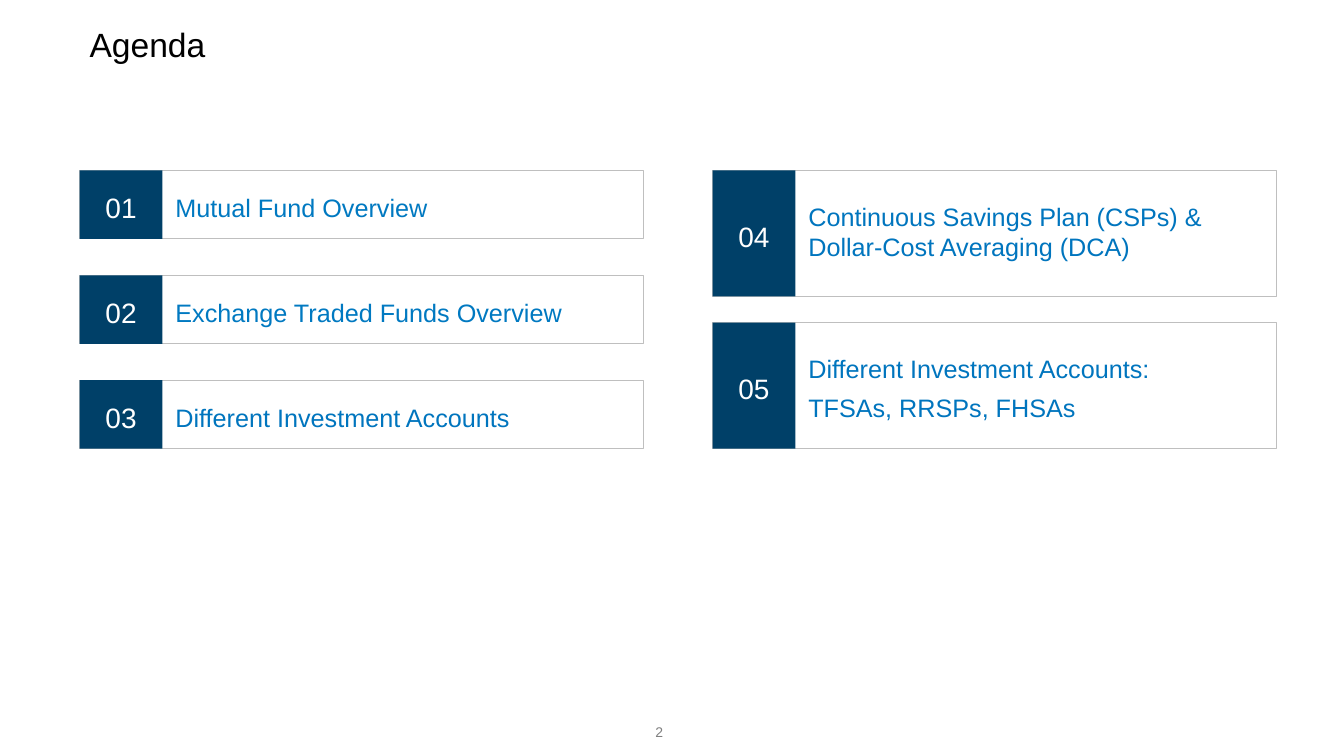
"""Build the agenda slide: five numbered topics in two columns."""
from pptx import Presentation
from pptx import util as u
from pptx.dml.color import RGBColor
from pptx.enum import shapes, text

TITLE = "Agenda"
PAGE_NUMBER = "2"
COLUMNS = [
    {"left": 56.9, "height": 49, "pitch": 74.9, "topics": [
        ("01", ["Mutual Fund Overview"], "topic", 1.3),
        ("02", ["Exchange Traded Funds Overview"], "topic", 1.3),
        ("03", ["Different Investment Accounts"], "topic_alt", 1.3),
    ]},
    {"left": 509, "height": 90, "pitch": 108.7, "topics": [
        ("04", ["Continuous Savings Plan (CSPs) & Dollar-Cost Averaging (DCA)"],
         "topic_alt", 1.0),
        ("05", ["Different Investment Accounts:", "TFSAs, RRSPs, FHSAs"],
         "topic_alt", 1.3),
    ]},
]
TOP, CARD_WIDTH, NUMBER_WIDTH = 121.7, 402.5, 59.2

THEME = {
    "font": "Arial",
    "colors": {"title": "000000", "page": "808080", "topic": "0079C1",
               "topic_alt": "0075BE", "number": "FFFFFF",
               "block": "004068", "border": "BFBFBF"},
    "sizes": {"title": 24, "page": 10, "topic": 18, "topic_alt": 18, "number": 20},
}


def color(name):
    return RGBColor.from_string(THEME["colors"][name])


def write(box, lines, style, spacing, align, anchor, insets):
    frame = box.text_frame
    frame.word_wrap = True
    frame.vertical_anchor = anchor
    (frame.margin_left, frame.margin_top,
     frame.margin_right, frame.margin_bottom) = map(u.Pt, insets)
    frame.text = "\n".join(lines)
    for para in frame.paragraphs:
        para.alignment = align
        para.line_spacing = spacing
        para.font.name = THEME["font"]
        para.font.size = u.Pt(THEME["sizes"][style])
        para.font.color.rgb = color(style)


def add_label(page, frame, label, style, spacing, align):
    box = page.shapes.add_textbox(*map(u.Pt, frame))
    write(box, [label], style, spacing, align, text.MSO_ANCHOR.TOP,
          (7.2, 3.6, 7.2, 3.6))


def add_block(page, frame, lines, style, spacing, align, insets, fill=None):
    block = page.shapes.add_shape(shapes.MSO_SHAPE.RECTANGLE, *map(u.Pt, frame))
    block.shadow.inherit = False
    if fill:
        block.fill.solid()
        block.fill.fore_color.rgb = color(fill)
        block.line.fill.background()
    else:
        block.fill.background()
        block.line.color.rgb = color("border")
        block.line.width = u.Pt(0.75)
    write(block, lines, style, spacing, align, text.MSO_ANCHOR.MIDDLE, insets)


def main():
    deck = Presentation()
    deck.slide_width, deck.slide_height = u.Pt(960), u.Pt(540)
    page = deck.slides.add_slide(deck.slide_layouts[6])
    left, center = text.PP_ALIGN.LEFT, text.PP_ALIGN.CENTER

    add_label(page, (56.9, 16.6, 828, 104.4), TITLE, "title", 0.9, left)
    add_label(page, (452.9, 513.4, 36, 26), PAGE_NUMBER, "page", 1.0, center)

    for column in COLUMNS:
        x, height = column["left"], column["height"]
        for row, (number, lines, style, spacing) in enumerate(column["topics"]):
            y = TOP + row * column["pitch"]
            add_block(page, (x, y, CARD_WIDTH, height), lines, style, spacing,
                      left, (68.4, 0, 14.4, 2.9))
            add_block(page, (x, y, NUMBER_WIDTH, height), [number], "number", 1.3,
                      center, (0, 0, 0, 2.9), fill="block")

    deck.save("out.pptx")


if __name__ == "__main__":
    main()
